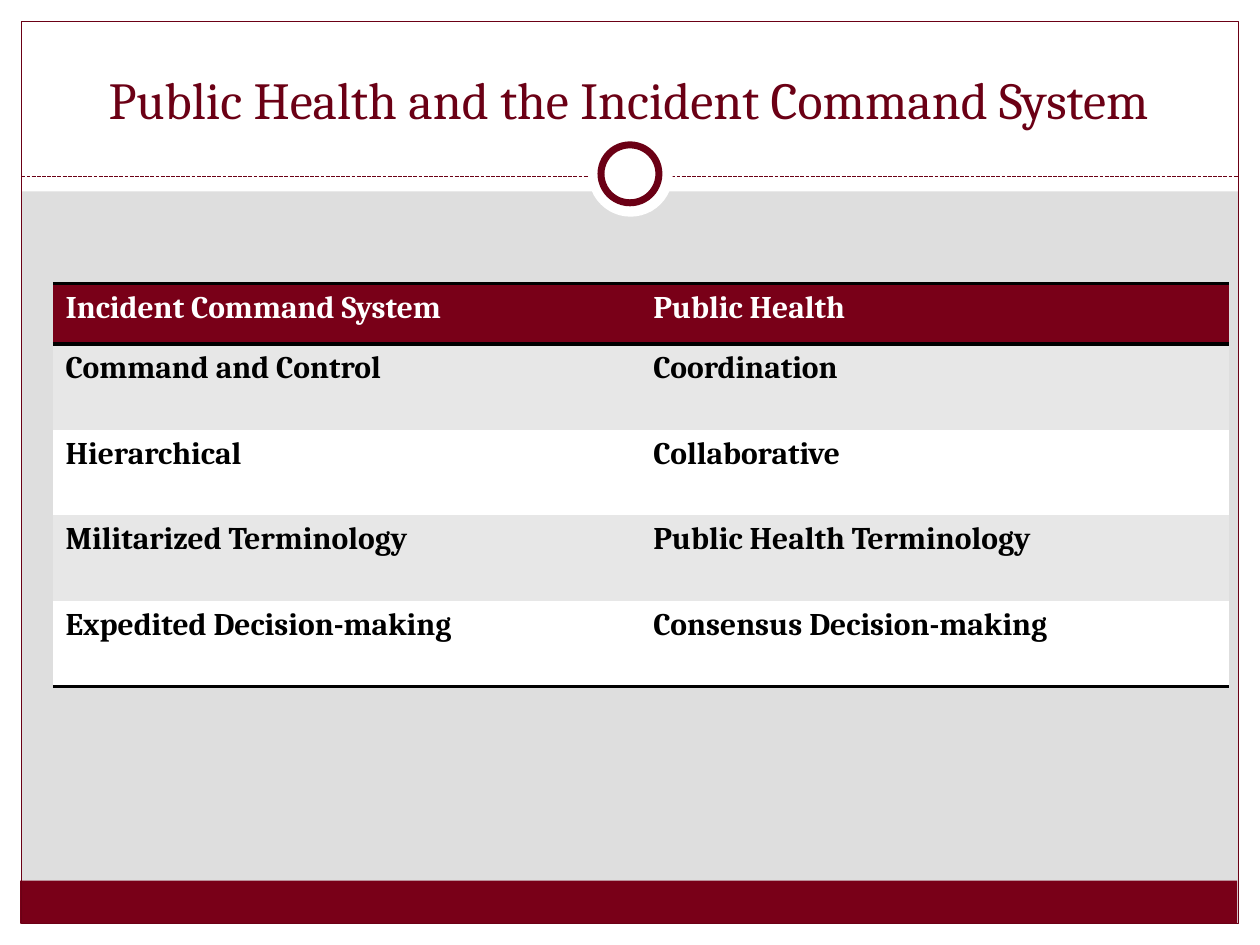
from dataclasses import dataclass
from typing import Optional

from lxml import etree
from pptx import Presentation
from pptx.dml.color import RGBColor
from pptx.enum import dml, shapes, text
from pptx.oxml import ns
from pptx.util import Inches, Pt

MAROON = RGBColor(0x79, 0x00, 0x18)
DARK_MAROON = RGBColor(0x6B, 0x00, 0x15)
WHITE = RGBColor(0xFF, 0xFF, 0xFF)
BLACK = RGBColor(0x00, 0x00, 0x00)
BACKDROP = RGBColor(0xDE, 0xDE, 0xDE)
BAND = RGBColor(0xE7, 0xE7, 0xE7)

FONT = "Cambria"
PLAIN_TABLE = "{2D5ABB26-0587-4C30-8999-92F81FD0307C}"
RECT = shapes.MSO_SHAPE.RECTANGLE
OVAL = shapes.MSO_SHAPE.OVAL


@dataclass(frozen=True)
class Panel:
    left: float
    top: float
    width: float
    height: float
    fill: Optional[RGBColor] = WHITE
    line_width: float = 0
    kind: shapes.MSO_SHAPE = RECT


FRAME = [
    Panel(0, 7.33, 10, 0.17),
    Panel(0, 0, 10, 1.52),
    Panel(0, 0, 0.17, 7.5),
    Panel(9.83, 0, 0.17, 7.5),
    Panel(0.16, 6.99, 9.66, 0.34, MAROON),
    Panel(0.17, 0.17, 9.66, 7.16, None, 0.75),
]
MEDALLION = [
    Panel(4.67, 1.05, 0.67, 0.67, kind=OVAL),
    Panel(4.77, 1.15, 0.46, 0.46, line_width=4, kind=OVAL),
]
COMPARISON = [
    ("Incident Command System", "Public Health"),
    ("Command and Control", "Coordination"),
    ("Hierarchical", "Collaborative"),
    ("Militarized Terminology", "Public Health Terminology"),
    ("Expedited Decision-making", "Consensus Decision-making"),
]


def draw_panel(slide, panel: Panel) -> None:
    shape = slide.shapes.add_shape(
        panel.kind, Inches(panel.left), Inches(panel.top),
        Inches(panel.width), Inches(panel.height))
    shape.shadow.inherit = False
    if panel.fill is None:
        shape.fill.background()
    else:
        shape.fill.solid()
        shape.fill.fore_color.rgb = panel.fill
    if panel.line_width:
        shape.line.color.rgb = DARK_MAROON
        shape.line.width = Pt(panel.line_width)
    else:
        shape.line.fill.background()


def draw_divider(slide) -> None:
    divider = slide.shapes.add_connector(
        shapes.MSO_CONNECTOR.STRAIGHT,
        Inches(0.17), Inches(1.4), Inches(9.83), Inches(1.4))
    divider.line.color.rgb = DARK_MAROON
    divider.line.width = Pt(0.75)
    divider.line.dash_style = dml.MSO_LINE.SQUARE_DOT
    etree.SubElement(divider.element.spPr, ns.qn("a:effectLst"))


def format_run(run, size: float, color: RGBColor, bold: bool = False) -> None:
    run.font.name = FONT
    run.font.size = Pt(size)
    run.font.bold = bold
    run.font.color.rgb = color


def add_rule(cell, side: str) -> None:
    properties = cell._tc.get_or_add_tcPr()
    rule = etree.SubElement(properties, ns.qn(f"a:ln{side}"), w=str(Pt(2)))
    fill = etree.SubElement(rule, ns.qn("a:solidFill"))
    etree.SubElement(fill, ns.qn("a:srgbClr"), val=str(BLACK))


def draw_comparison(slide) -> None:
    frame = slide.shapes.add_table(
        len(COMPARISON), 2, Inches(0.42), Inches(2.25), Inches(9.33), Inches(3.2))
    frame.element.find(f".//{ns.qn('a:tableStyleId')}").text = PLAIN_TABLE
    table = frame.table
    table.horz_banding = False
    last = len(COMPARISON) - 1
    for index, labels in enumerate(COMPARISON):
        header = index == 0
        table.rows[index].height = Inches(0.48 if header else 0.68)
        for column, label in enumerate(labels):
            cell = table.cell(index, column)
            if header:
                add_rule(cell, "T")
            if header or index == last:
                add_rule(cell, "B")
            cell.fill.solid()
            cell.fill.fore_color.rgb = MAROON if header else (WHITE, BAND)[index % 2]
            cell.text_frame.text = label
            format_run(cell.text_frame.paragraphs[0].runs[0], 18,
                       WHITE if header else BLACK, True)


def draw_title(slide) -> None:
    title = slide.shapes.add_textbox(
        Inches(0.33), Inches(0.25), Inches(9.33), Inches(0.83)).text_frame
    title.word_wrap = True
    title.vertical_anchor = text.MSO_ANCHOR.BOTTOM
    title.text = "Public Health and the Incident Command System"
    title.paragraphs[0].alignment = text.PP_ALIGN.CENTER
    format_run(title.paragraphs[0].runs[0], 29.7, DARK_MAROON)


def main() -> None:
    deck = Presentation()
    deck.slide_width, deck.slide_height = Inches(10), Inches(7.5)
    slide = deck.slides.add_slide(deck.slide_layouts[6])
    slide.background.fill.solid()
    slide.background.fill.fore_color.rgb = BACKDROP
    for panel in FRAME:
        draw_panel(slide, panel)
    draw_divider(slide)
    for panel in MEDALLION:
        draw_panel(slide, panel)
    draw_comparison(slide)
    draw_title(slide)
    deck.save("out.pptx")


if __name__ == "__main__":
    main()
